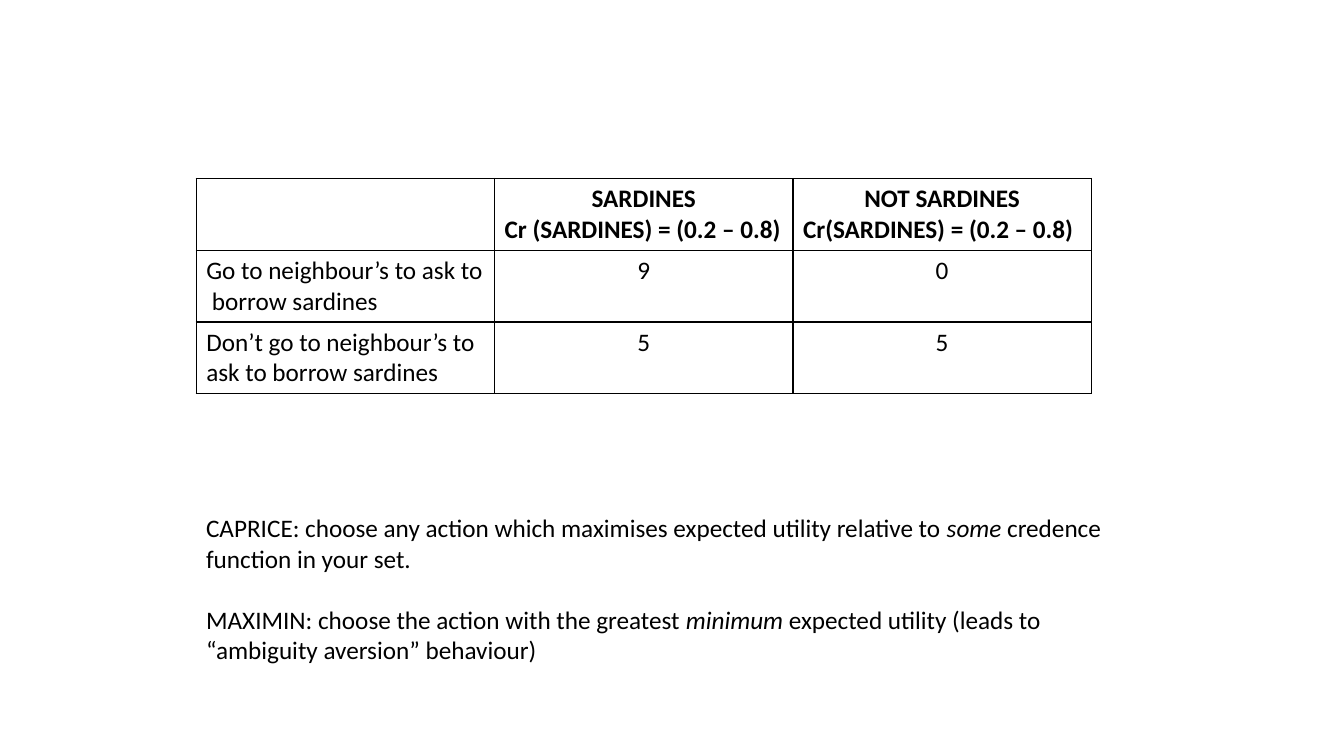
from dataclasses import dataclass

from lxml.etree import SubElement
from pptx import Presentation
from pptx.dml.color import RGBColor as Rgb
from pptx.enum.text import MSO_AUTO_SIZE as Fit, PP_ALIGN as Align
from pptx.oxml.ns import qn
from pptx.table import _Cell as Cell
from pptx.text.text import TextFrame as Frame
from pptx.util import Emu, Inches, Pt

COLORS = {"ink": "000000", "paper": "FFFFFF"}
FONT = "Calibri"
WIDE, HIGH = Inches(13.333), Inches(7.5)
LEFT = 0.146


@dataclass(frozen=True)
class Span:
    text: str
    slant: bool = False


@dataclass(frozen=True)
class Line:
    spans: tuple[Span, ...]
    align: Align = Align.LEFT


@dataclass(frozen=True)
class Action:
    name: str
    gains: tuple[int, int]


STATES = (
    ("SARDINES", "Cr (SARDINES) = (0.2 – 0.8)"),
    ("NOT SARDINES", "Cr(SARDINES) = (0.2 – 0.8)"),
)
ACTIONS = (
    Action("Go to neighbour’s to ask to  borrow sardines", (9, 0)),
    Action("Don’t go to neighbour’s to ask to borrow sardines", (5, 5)),
)
RULES = (
    Line((
        Span("CAPRICE: choose any action which maximises expected utility relative to "),
        Span("some ", True),
        Span("credence function in your set."),
    )),
    Line((
        Span("MAXIMIN: choose the action with the greatest "),
        Span("minimum", True),
        Span(" expected utility (leads to “ambiguity aversion” behaviour)"),
    )),
)


def across(share: float) -> Emu:
    return Emu(round(WIDE * share))


def down(share: float) -> Emu:
    return Emu(round(HIGH * share))


def plain(text: str, align: Align = Align.LEFT) -> Line:
    return Line((Span(text),), align)


def write(frame: Frame, *lines: Line, size: float = 18, bold: bool = False,
          color: str = "ink", gap: float = 0) -> None:
    frame.word_wrap = True
    for spot, line in enumerate(lines):
        para = frame.add_paragraph() if spot else frame.paragraphs[0]
        para.alignment = line.align
        para.space_before = Pt(gap if spot else 0)
        for span in line.spans:
            run = para.add_run()
            run.text = span.text
            font = run.font
            font.name, font.size = FONT, Pt(size)
            font.bold, font.italic = bold, span.slant
            font.color.rgb = Rgb.from_string(COLORS[color])


def frame_cell(cell: Cell) -> None:
    cell.fill.solid()
    cell.fill.fore_color.rgb = Rgb.from_string(COLORS["paper"])
    props = cell._tc.get_or_add_tcPr()
    for spot, side in enumerate(("lnL", "lnR", "lnT", "lnB")):
        edge = SubElement(props, qn(f"a:{side}"), w=str(Pt(1)))
        fill = SubElement(edge, qn("a:solidFill"))
        SubElement(fill, qn("a:srgbClr"), val=COLORS["ink"])
        props.insert(spot, edge)


def draw_table(slide) -> None:
    rows, cols = len(ACTIONS) + 1, len(STATES) + 1
    table = slide.shapes.add_table(
        rows, cols, across(LEFT), down(0.236),
        across(0.222 * cols), down(0.095 * rows)).table
    table.first_row = table.horz_banding = False
    for cell in table.iter_cells():
        frame_cell(cell)
    for col, (state, odds) in enumerate(STATES, 1):
        write(table.cell(0, col).text_frame, plain(state, Align.CENTER),
              plain(odds), bold=True)
    for row, action in enumerate(ACTIONS, 1):
        write(table.cell(row, 0).text_frame, plain(action.name))
        for col, gain in enumerate(action.gains, 1):
            write(table.cell(row, col).text_frame, plain(str(gain), Align.CENTER))


def draw_rules(slide) -> None:
    box = slide.shapes.add_textbox(
        across(LEFT), down(0.631), across(0.685), down(0.256))
    frame = box.text_frame
    frame.auto_size = Fit.SHAPE_TO_FIT_TEXT
    frame.margin_top = down(0.047)
    write(frame, *RULES, gap=22)


def main() -> None:
    deck = Presentation()
    deck.slide_width, deck.slide_height = WIDE, HIGH
    slide = deck.slides.add_slide(deck.slide_layouts.get_by_name("Blank"))
    draw_table(slide)
    draw_rules(slide)
    deck.save("out.pptx")


if __name__ == "__main__":
    main()
